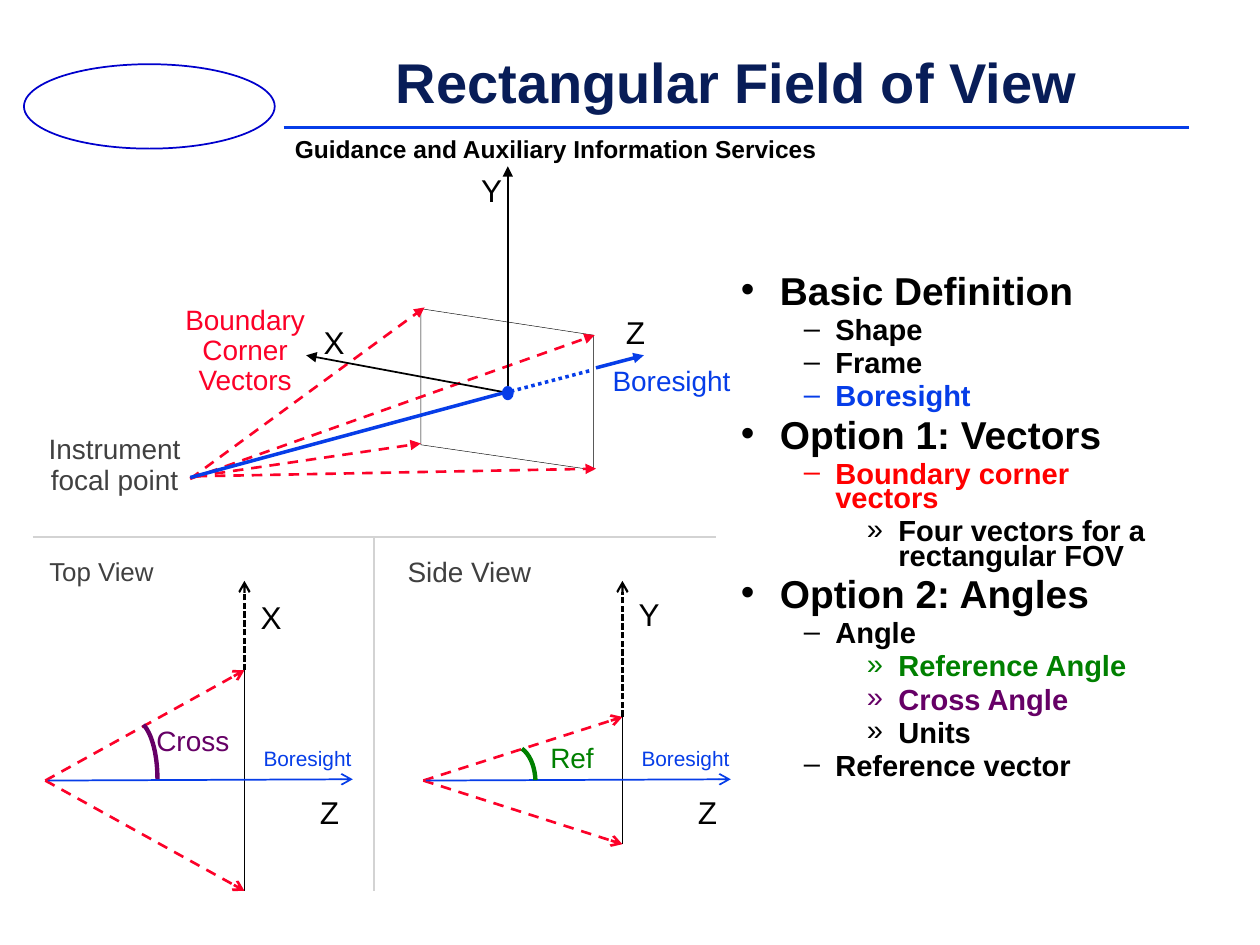
import pptx
import pptx.util
import pptx.dml.color
import pptx.enum.dml
import pptx.enum.shapes
import pptx.enum.text
import pptx.oxml
import pptx.oxml.ns
import lxml.etree

RGB = pptx.dml.color.RGBColor
BLACK = RGB(0x00, 0x00, 0x00)
BLUE = RGB(0x06, 0x3D, 0xE8)
ORBIT = RGB(0x00, 0x00, 0xCC)
NAVY = RGB(0x08, 0x1D, 0x58)
CRIMSON = RGB(0xFC, 0x01, 0x28)
RED = RGB(0xFF, 0x00, 0x00)
GREEN = RGB(0x00, 0x80, 0x00)
PURPLE = RGB(0x66, 0x00, 0x66)
GRAY = RGB(0x40, 0x40, 0x40)
SILVER = RGB(0xD3, 0xD3, 0xD3)

SHAPE = pptx.enum.shapes.MSO_SHAPE
ALIGN = pptx.enum.text.PP_ALIGN
DASH = pptx.enum.dml.MSO_LINE
COLS, ROWS = 100, 75

TITLE = "Rectangular Field of View"
FACILITY = "Guidance and Auxiliary Information Services"
OUTLINE = [
    (0, "Basic Definition", BLACK),
    (1, "Shape", BLACK),
    (1, "Frame", BLACK),
    (1, "Boresight", BLUE),
    (0, "Option 1: Vectors", BLACK),
    (1, "Boundary corner vectors", RED),
    (2, "Four vectors for a rectangular FOV", BLACK),
    (0, "Option 2: Angles", BLACK),
    (1, "Angle", BLACK),
    (2, "Reference Angle", GREEN),
    (2, "Cross Angle", PURPLE),
    (2, "Units", BLACK),
    (1, "Reference vector", BLACK),
]
LEVELS = [("•", 22.2, 0.31, 0.31), ("–", 16.6, 0.75, 0.25), ("»", 16.6, 1.25, 0.25)]

RULES = [
    ((22.5, 10.1), (94.4, 10.1), BLUE, 1.5),
    ((2.6, 42.6), (56.8, 42.6), SILVER, 1),
    ((29.7, 42.6), (29.7, 70.7), SILVER, 1),
]
FOV_CORNERS = [(33.4, 24.5), (47.1, 26.6), (47.1, 37.3), (33.4, 35.3)]
RAYS = [
    ((15.1, 38), (47.2, 26.6)),
    ((15.1, 38), (33.7, 24.4)),
    ((15.6, 37.8), (33.4, 35.2)),
    ((15.6, 37.8), (47.3, 37.2)),
]
AXES = [
    ((40.3, 31.1), (40.3, 13.2), BLACK, 1, None, "triangle"),
    ((40.4, 31.2), (24.3, 28.2), BLACK, 1, None, "triangle"),
    ((15.1, 37.9), (39.9, 31.2), BLUE, 2, None, None),
    ((40, 31.2), (46.9, 29.4), BLUE, 2, DASH.ROUND_DOT, None),
    ((47.3, 29.2), (51.1, 28.2), BLUE, 2, None, "triangle"),
]
AXIS_LABELS = [("X", 24.7, 25.5), ("Y", 37.2, 13.4), ("Z", 48.7, 24.7)]
LABELS = [
    (["Boresight"], (46.2, 28.7, 14.2, 5), BLUE, 16),
    (["Instrument", "focal point"], (2.3, 34.1, 13.6, 6.3), GRAY, 16),
    (["Boundary Corner Vectors"], (11.9, 23.8, 15.1, 8.3), CRIMSON, 16),
]
VIEWS = [
    dict(left=3.6, name="Top View", name_box=(2.7, 43.9, 10.7, 4.2), name_size=14.8,
         edges=(53.2, 70.7), axis="X", axis_row=47.3, color=PURPLE,
         angle="Cross", angle_box=(11.2, 57.2, 8.2, 3.7),
         arc_box=(9, 57.2, 3.5, 9.3), sweep=(167.04, 0)),
    dict(left=33.6, name="Side View", name_box=(30.8, 43.8, 12.9, 4.2), name_size=16,
         edges=(56.9, 67), axis="Y", axis_row=47.1, color=GREEN,
         angle="Ref", angle_box=(41.3, 58.6, 8.2, 3.7),
         arc_box=(39, 59.2, 3.5, 5.8), sweep=(170.4, 212.36)),
]

prs = pptx.Presentation()
prs.slide_width, prs.slide_height = pptx.util.Inches(10), pptx.util.Inches(7.5)
s = prs.slides.add_slide(prs.slide_layouts[1])
shapes = s.shapes


def grid(col, row):
    return round(col * prs.slide_width / COLS), round(row * prs.slide_height / ROWS)


def box(cells):
    return grid(*cells[:2]) + grid(*cells[2:])


def place(sp, cells):
    sp.left, sp.top, sp.width, sp.height = box(cells)


def stroke(sp, color, width):
    sp.line.color.rgb = color
    sp.line.width = pptx.util.Pt(width)


def style(p, text, color, size, bold=False):
    r = p.add_run()
    r.text = text
    for key, value in dict(name="Arial", size=pptx.util.Pt(size), bold=bold).items():
        setattr(r.font, key, value)
    r.font.color.rgb = color


def frame(sp, wrap=True, inset=(0.1, 0.05)):
    tf = sp.text_frame
    x, y = map(pptx.util.Inches, inset)
    values = dict(word_wrap=wrap, margin_left=x, margin_right=x, margin_top=y,
                  margin_bottom=y, auto_size=pptx.enum.text.MSO_AUTO_SIZE.NONE,
                  vertical_anchor=pptx.enum.text.MSO_ANCHOR.TOP)
    for key, value in values.items():
        setattr(tf, key, value)
    return tf


def label(lines, cells, color, size, align=ALIGN.CENTER, spacing=0.9,
          bold=False, **layout):
    tf = frame(shapes.add_textbox(*box(cells)), **layout)
    for i, text in enumerate(lines):
        p = tf.add_paragraph() if i else tf.paragraphs[0]
        p.alignment, p.line_spacing = align, spacing
        style(p, text, color, size, bold)


def axis_label(text, col, row):
    label([text], (col, row, 3.7, 3.2), BLACK, 18, ALIGN.LEFT, wrap=False)


def line(start, end, color, width, dash=None, arrow=None):
    sp = shapes.add_connector(pptx.enum.shapes.MSO_CONNECTOR.STRAIGHT,
                              *grid(*start), *grid(*end))
    stroke(sp, color, width)
    if dash:
        sp.line.dash_style = dash
    if arrow:
        tail = lxml.etree.SubElement(sp.line._get_or_add_ln(), pptx.oxml.ns.qn("a:tailEnd"))
        tail.set("type", arrow)
    lxml.etree.SubElement(sp._element.spPr, pptx.oxml.ns.qn("a:effectLst"))


def outline_shape(kind, cells, color, width, fill=None):
    sp = shapes.add_shape(kind, *box(cells))
    sp.shadow.inherit = False
    stroke(sp, color, width)
    if fill:
        sp.fill.solid()
        sp.fill.fore_color.rgb = fill
    else:
        sp.fill.background()
    return sp


def bullet(p, level):
    char, size, margin, hang = LEVELS[level]
    p.level, p.line_spacing = level, 0.7
    pPr = p._p.get_or_add_pPr()
    pPr.set("marL", str(pptx.util.Inches(margin)))
    pPr.set("indent", str(-pptx.util.Inches(hang)))
    for tag, child, key, value in (("spcBef", "spcPct", "val", "30000"),
                                   ("buChar", None, "char", char)):
        e = lxml.etree.SubElement(pPr, pptx.oxml.ns.qn("a:" + tag))
        if child:
            e = lxml.etree.SubElement(e, pptx.oxml.ns.qn("a:" + child))
        e.set(key, value)
    return size


def draw_view(v):
    left, (top, bottom) = v["left"], v["edges"]
    plane, middle = left + 15.8, 61.95
    line((plane, top), (plane, bottom), BLACK, 1)
    for edge in v["edges"]:
        line((left, middle), (plane, edge), CRIMSON, 1.5, DASH.DASH, "arrow")
    line((left + 0.2, middle), (left + 24.4, middle - 0.1), BLUE, 1, None, "arrow")
    line((plane, top), (plane, 46.1), BLACK, 1.25, DASH.SQUARE_DOT, "arrow")
    axis_label(v["axis"], left + 16.1, v["axis_row"])
    axis_label("Z", left + 20.8, 62.75)
    label(["Boresight"], (left + 16.1, 59.1, 9.4, 3.7), BLUE, 11.9, spacing=0.8)
    arc = outline_shape(SHAPE.ARC, v["arc_box"], v["color"], 2.5)
    for i, angle in enumerate(v["sweep"]):
        arc.adjustments[i] = angle
    label([v["angle"]], v["angle_box"], v["color"], 16)
    label([v["name"]], v["name_box"], GRAY, v["name_size"])


title, body = shapes.title, s.placeholders[1]
place(title, (30.4, 4.2, 56.1, 5.4))
p = frame(title, wrap=False, inset=(0.07, 0.03)).paragraphs[0]
p.alignment, p.line_spacing = ALIGN.CENTER, 0.87
style(p, TITLE, NAVY, 32, True)

place(body, (57.8, 21.7, 34.7, 44.9))
tf = frame(body)
for i, (level, text, color) in enumerate(OUTLINE):
    p = tf.add_paragraph() if i else tf.paragraphs[0]
    style(p, text, color, bullet(p, level), True)

outline_shape(SHAPE.OVAL, (1.9, 5.1, 19.9, 6.7), ORBIT, 1)
label([FACILITY], (22.7, 10.6, 42.9, 2.7), BLACK, 14, ALIGN.LEFT,
      bold=True, wrap=False, inset=(0.07, 0.03))
for rule in RULES:
    line(*rule)

builder = shapes.build_freeform(*grid(*FOV_CORNERS[0]))
builder.add_line_segments([grid(*c) for c in FOV_CORNERS[1:]], close=True)
fov = builder.convert_to_shape()
fov.shadow.inherit = False
fov.fill.background()
stroke(fov, BLACK, 0.25)
for start, end in RAYS:
    line(start, end, CRIMSON, 1.5, DASH.DASH, "triangle")
for axis in AXES:
    line(*axis)
outline_shape(SHAPE.OVAL, (39.9, 30.7, 0.8, 1), BLUE, 1, BLUE)
for item in AXIS_LABELS:
    axis_label(*item)
for item in LABELS:
    label(*item)
for view in VIEWS:
    draw_view(view)

prs.save("out.pptx")
